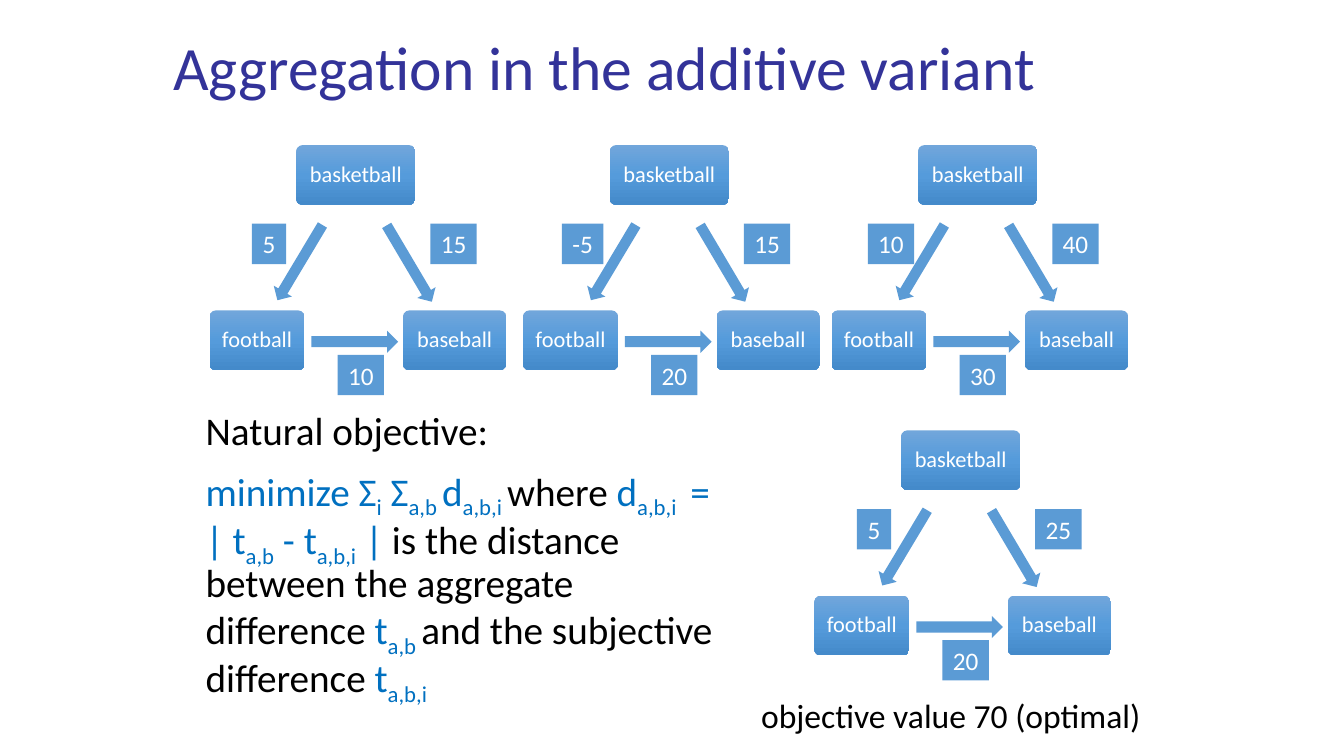
from lxml import etree
from pptx import Presentation
from pptx.dml.color import RGBColor
from pptx.enum.shapes import MSO_SHAPE
from pptx.enum.text import MSO_ANCHOR, PP_ALIGN
from pptx.oxml.ns import qn
from pptx.util import Inches, Pt

ROUNDED = MSO_SHAPE.ROUNDED_RECTANGLE
RECTANGLE = MSO_SHAPE.RECTANGLE
ARROW = MSO_SHAPE.RIGHT_ARROW
TOP, MIDDLE = MSO_ANCHOR.TOP, MSO_ANCHOR.MIDDLE
LEFT, CENTER = PP_ALIGN.LEFT, PP_ALIGN.CENTER

CELL = 0.1
COLUMNS, ROWS = 133.33, 75

FONT = "Calibri"
WHITE, BLACK = "FFFFFF", "000000"
NAVY, FORMULA, BLUE = "333399", "0070C0", "5B9BD5"
NODE_STOPS = [(0, "71A6DB"), (50, "559BDB"), (100, "448ACA")]

NODE_HEIGHT, LABEL_HEIGHT = 5.9, 4
NODES = [("basketball", 8.6, 0, 11.8), ("baseball", 19.2, 16.4, 10.2),
         ("football", 0, 16.4, 9.4)]
ARROWS = [(15.4, 10.7, 8.8, 2.1, 59.4), (10.1, 18.4, 8.6, 2.2, 0),
          (4.6, 10.6, 8.7, 2.1, 120.9)]
LABEL_SPOTS = [(5.9, 7.8), (24.2, 7.8), (15, 20.8)]
LABEL_WIDTHS = {"5": 3.4, "-5": 4.1}
DIAGRAMS = [(20.8, 14.4, ("5", "15", "10")), (51.9, 14.4, ("-5", "15", "20")),
            (82.5, 14.4, ("10", "40", "30")), (80.8, 42.7, ("5", "25", "20"))]

OBJECTIVE = [
    ("minimize Σ", FORMULA, False), ("i", FORMULA, True),
    (" Σ", FORMULA, False), ("a,b ", FORMULA, True),
    ("d", FORMULA, False), ("a,b,i ", FORMULA, True),
    ("where ", BLACK, False),
    ("d", FORMULA, False), ("a,b,i ", FORMULA, True),
    (" = | t", FORMULA, False), ("a,b", FORMULA, True),
    (" - t", FORMULA, False), ("a,b,i", FORMULA, True),
    (" | ", FORMULA, False),
    ("is the distance between the aggregate difference ", BLACK, False),
    ("t", FORMULA, False), ("a,b ", FORMULA, True),
    ("and the subjective difference ", BLACK, False),
    ("t", FORMULA, False), ("a,b,i", FORMULA, True),
]


def color(value):
    return RGBColor.from_string(value)


def cells(*counts):
    return [Inches(count * CELL) for count in counts]


def write(frame, paragraphs, size=18, align=LEFT, anchor=TOP, inset=0,
          indent=0, line_spacing=None, space_before=0, wrap=True):
    frame.word_wrap = wrap
    frame.vertical_anchor = anchor
    frame.margin_left, frame.margin_right = cells(inset + indent, inset)
    frame.margin_top = frame.margin_bottom = cells(inset)[0]
    for index, runs in enumerate(paragraphs):
        paragraph = frame.add_paragraph() if index else frame.paragraphs[0]
        paragraph.alignment = align
        paragraph.line_spacing = line_spacing
        if index:
            paragraph.space_before = Pt(space_before)
        for text, shade, subscript in runs:
            run = paragraph.add_run()
            run.text = text
            run.font.name = FONT
            run.font.size = Pt(size)
            run.font.color.rgb = color(shade)
            if subscript:
                run._r.get_or_add_rPr().set("baseline", "-25000")


class Board:
    """Draws styled elements on one slide, measured in grid cells."""

    def __init__(self, presentation):
        self.slide = presentation.slides.add_slide(presentation.slide_layouts[6])

    def text(self, left, top, width, height, paragraphs, **style):
        box = self.slide.shapes.add_textbox(*cells(left, top, width, height))
        write(box.text_frame, paragraphs, **style)

    def shape(self, kind, left, top, width, height):
        shape = self.slide.shapes.add_shape(kind, *cells(left, top, width, height))
        shape.shadow.inherit = False
        shape.line.fill.background()
        shape.fill.solid()
        shape.fill.fore_color.rgb = color(BLUE)
        return shape

    def node(self, name, left, top, width):
        node = self.shape(ROUNDED, left, top, width, NODE_HEIGHT)
        node.adjustments[0] = 0.1
        node.fill.gradient()
        node.fill.gradient_angle = 270
        stops = node._element.spPr.find(".//" + qn("a:gsLst"))
        for stop in list(stops):
            stops.remove(stop)
        for position, shade in NODE_STOPS:
            stop = etree.SubElement(stops, qn("a:gs"), pos=str(position * 1000))
            etree.SubElement(stop, qn("a:srgbClr"), val=shade)
        write(node.text_frame, [[(name, WHITE, False)]], size=16, align=CENTER,
              anchor=MIDDLE, inset=0.7, line_spacing=0.9)

    def arrow(self, left, top, width, height, angle):
        self.shape(ARROW, left, top, width, height).rotation = angle

    def label(self, value, center, top):
        width = LABEL_WIDTHS.get(value, 4.6)
        label = self.shape(RECTANGLE, center - width / 2, top, width, LABEL_HEIGHT)
        write(label.text_frame, [[(value, WHITE, False)]], align=CENTER,
              anchor=MIDDLE, inset=0.5, wrap=False)

    def diagram(self, left, top, values):
        for name, column, row, width in NODES:
            self.node(name, left + column, top + row, width)
        for column, row, *size in ARROWS:
            self.arrow(left + column, top + row, *size)
        for value, (center, row) in zip(values, LABEL_SPOTS):
            self.label(value, left + center, top + row)


def main():
    presentation = Presentation()
    presentation.slide_width, presentation.slide_height = cells(COLUMNS, ROWS)
    board = Board(presentation)
    board.text(17.2, 2, 100, 9.9,
               [[("Aggregation in the additive variant", NAVY, False)]],
               size=44, anchor=MIDDLE, line_spacing=0.9)
    board.text(16.7, 40.8, 55.1, 33,
               [[("Natural objective:", BLACK, False)], OBJECTIVE],
               size=28, indent=3.7, line_spacing=0.9, space_before=10)
    for left, top, values in DIAGRAMS:
        board.diagram(left, top, values)
    board.text(71.8, 68.9, 45.8, 5,
               [[("objective value 70 (optimal)", BLACK, False)]],
               size=24, indent=3.7)
    presentation.save("out.pptx")


if __name__ == "__main__":
    main()
